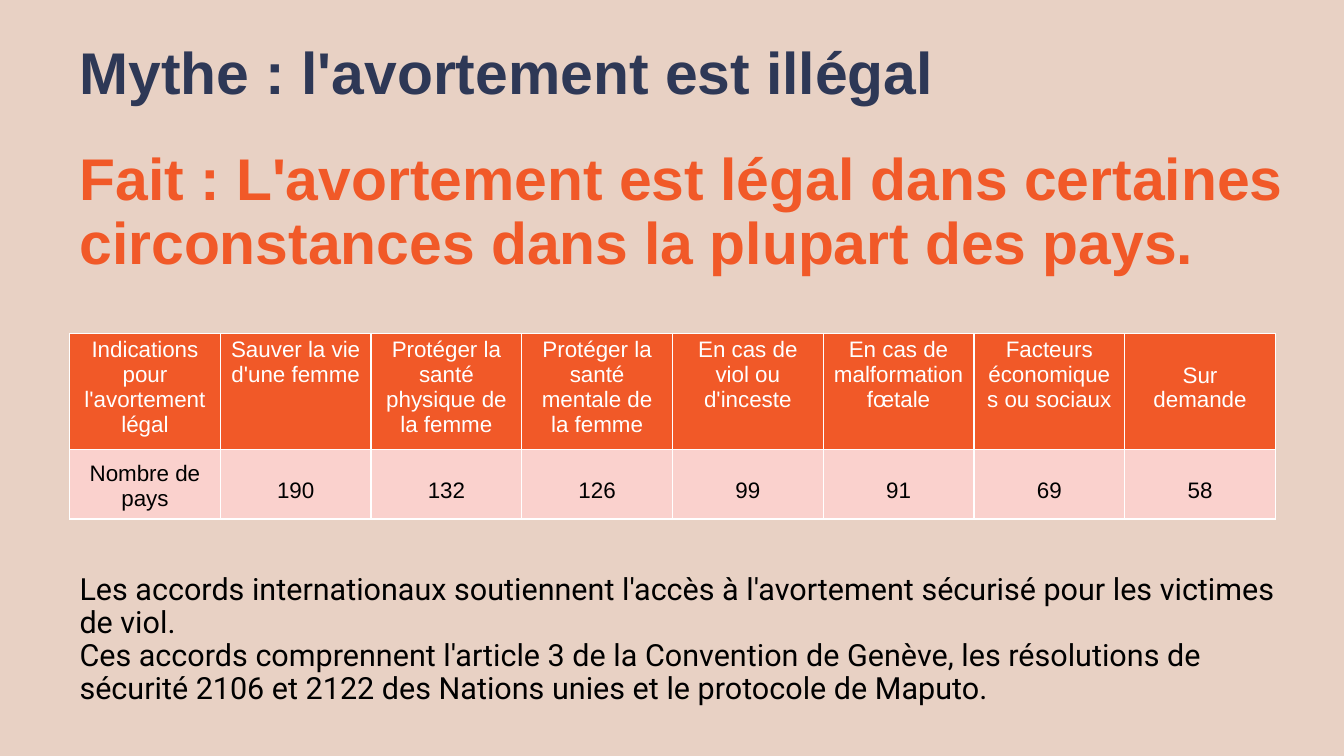
from lxml import etree
from pptx import Presentation
from pptx.dml.color import RGBColor
from pptx.enum.text import PP_ALIGN
from pptx.oxml.ns import qn
from pptx.util import Inches, Pt

CENTER = PP_ALIGN.CENTER
NAVY, ORANGE, PINK = "2E3856", "F15928", "FAD1CD"
WHITE, BLACK, SAND = "FFFFFF", "000000", "E8D1C4"
LEFT = 0.69
HEADS = [
    "Indications pour l'avortement légal",
    "Sauver la vie d'une femme",
    "Protéger la santé physique de la femme",
    "Protéger la santé mentale de la femme",
    "En cas de viol ou d'inceste",
    "En cas de malformation fœtale",
    "Facteurs économiques ou sociaux",
    "Sur demande",
]
COUNTS = ["Nombre de pays", "190", "132", "126", "99", "91", "69", "58"]
ACCORDS = [
    "Les accords internationaux soutiennent l'accès à l'avortement sécurisé "
    "pour les victimes de viol.",
    "Ces accords comprennent l'article 3 de la Convention de Genève, les "
    "résolutions de sécurité 2106 et 2122 des Nations unies et le protocole "
    "de Maputo.",
]


def color(code):
    """Turn a hex string into a colour."""
    return RGBColor.from_string(code)


def style(para, face, size, code, bold=False):
    """Set the font of a paragraph."""
    font = para.font
    font.name, font.size, font.bold = face, Pt(size), bold
    font.color.rgb = color(code)


def add_text(slide, box, lines, face, size, code, bold=False):
    """Place a block of paragraphs in the given box."""
    frame = slide.shapes.add_textbox(*map(Inches, box)).text_frame
    frame.word_wrap = True
    frame.margin_left = frame.margin_right = Inches(0.1)
    frame.margin_top = frame.margin_bottom = Inches(0.1)
    frame.text = "\n".join(lines)
    for para in frame.paragraphs:
        para.line_spacing = 0.9
        style(para, face, size, code, bold)


def add_edges(cell):
    """Draw thin white borders around a cell."""
    props = cell._tc.get_or_add_tcPr()
    for side in ("lnL", "lnR", "lnT", "lnB"):
        line = etree.SubElement(props, qn("a:" + side), w=str(Pt(1)))
        fill = etree.SubElement(line, qn("a:solidFill"))
        etree.SubElement(fill, qn("a:srgbClr"), val=WHITE)


def fill_cell(cell, text, back, code, top):
    """Write and colour one cell, its text starting at the given depth."""
    add_edges(cell)
    cell.fill.solid()
    cell.fill.fore_color.rgb = color(back)
    cell.margin_left = cell.margin_right = Inches(0.09)
    cell.margin_top, cell.margin_bottom = Inches(top), Inches(0.04)
    cell.text = text
    para = cell.text_frame.paragraphs[0]
    para.alignment = CENTER
    style(para, "Arial", 16, code)


def add_grid(slide, box, heights):
    """Place the table of legal grounds in the given box."""
    cols = len(HEADS)
    grid = slide.shapes.add_table(2, cols, *map(Inches, box)).table
    for row, height in zip(grid.rows, heights):
        row.height = Inches(height)
    for col, (head, count) in enumerate(zip(HEADS, COUNTS)):
        grid.columns[col].width = Inches(box[2] / cols)
        fill_cell(grid.cell(0, col), head, ORANGE, WHITE,
                  0.29 if col == cols - 1 else 0.04)
        fill_cell(grid.cell(1, col), count, PINK, BLACK,
                  0.29 if col else 0.12)


def build(slide):
    """Lay out the myth, the fact, the table and the accords."""
    slide.background.fill.solid()
    slide.background.fill.fore_color.rgb = color(SAND)
    add_text(slide, (LEFT, 0.33, 10, 1.05),
             ["Mythe : l'avortement est illégal"], "Arial", 42, NAVY, True)
    add_text(slide, (LEFT, 1.39, 12.21, 1.5),
             ["Fait : L'avortement est légal dans certaines circonstances "
              "dans la plupart des pays."], "Arial", 42, ORANGE, True)
    add_grid(slide, (LEFT, 3.31, 11.96, 1.74), (1.08, 0.66))
    add_text(slide, (LEFT, 5.6, 12.21, 1.5), ACCORDS, "Roboto", 21.8, BLACK)


def main():
    """Make the deck and save it."""
    deck = Presentation()
    deck.slide_width, deck.slide_height = Inches(13.33), Inches(7.5)
    build(deck.slides.add_slide(deck.slide_layouts[6]))
    deck.save("out.pptx")


if __name__ == "__main__":
    main()
